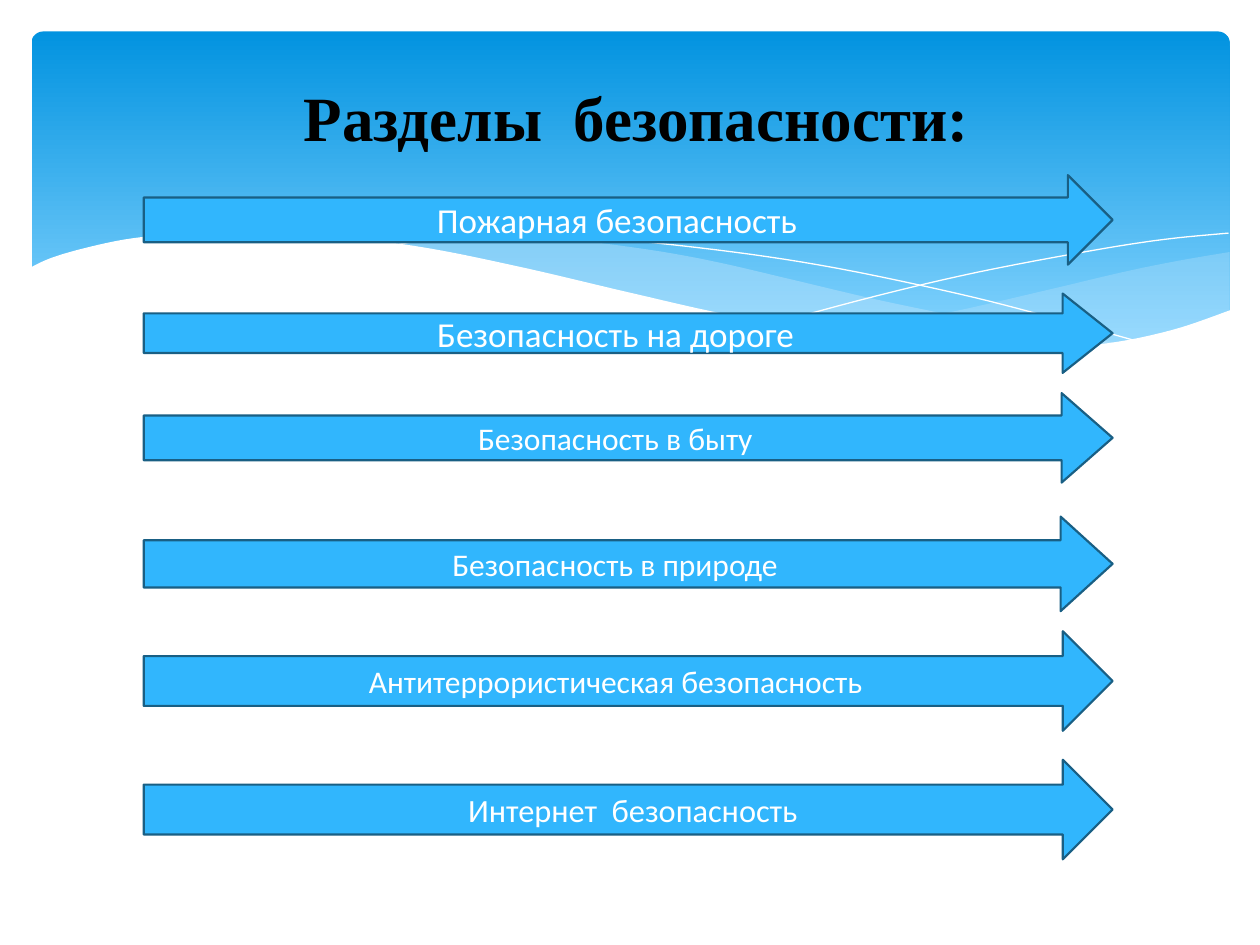
from lxml import etree
from pptx import Presentation
from pptx import util as u
from pptx.dml.color import RGBColor
from pptx.enum import shapes, text
from pptx.oxml.ns import qn


def rgb(value):
    return RGBColor.from_string(value)


def curve(knots, steps=6):
    """Points of a smooth (Catmull-Rom) curve through the knots."""
    ends = [knots[0], *knots, knots[-1]]
    points = [knots[0]]
    for a, b, c, d in zip(ends, ends[1:], ends[2:], ends[3:]):
        for i in range(1, steps + 1):
            t = i / steps
            points.append(tuple(
                b[k] + 0.5 * t * (c[k] - a[k]
                                  + t * (2 * a[k] - 5 * b[k] + 4 * c[k] - d[k]
                                         + t * (3 * (b[k] - c[k]) + d[k] - a[k])))
                for k in (0, 1)))
    return points


class Deck:
    WHITE, BLACK = "FFFFFF", "000000"
    ACCENT, EDGE, MIST = "31B6FD", "195F84", "C6E7FC"
    BODY_FONT, TITLE_FONT = "Calibri", "Times New Roman"

    def __init__(self, prs):
        self.s = prs.slides.add_slide(prs.slide_layouts[6])

    def label(self, shape, words, size, font, color, bold=False):
        tf = shape.text_frame
        tf.word_wrap = True
        tf.vertical_anchor = text.MSO_ANCHOR.MIDDLE
        p = tf.paragraphs[0]
        p.text = words
        p.alignment = text.PP_ALIGN.CENTER
        p.font.size, p.font.name, p.font.bold = u.Pt(size), font, bold
        p.font.color.rgb = rgb(color)
        return tf

    def banner(self, x, y, w, h, top, bottom):
        sp = self.s.shapes.add_shape(
            shapes.MSO_SHAPE.ROUNDED_RECTANGLE, *map(u.Inches, (x, y, w, h)))
        sp.shadow.inherit = False
        sp.adjustments[0] = 0.034
        sp.line.fill.background()
        sp.fill.gradient()
        sp.fill.gradient_angle = 270
        for stop, color, pos in zip(sp.fill.gradient_stops, (top, bottom), (0, 0.9)):
            stop.color.rgb = rgb(color)
            stop.position = pos

    def outline(self, points, close):
        first, *rest = [(u.Inches(x), u.Inches(y)) for x, y in points]
        fb = self.s.shapes.build_freeform(*first, scale=1.0)
        fb.add_line_segments(rest, close=close)
        sp = fb.convert_to_shape()
        sp.shadow.inherit = False
        return sp

    def area(self, points, color, opacity=100):
        sp = self.outline(points, True)
        sp.line.fill.background()
        sp.fill.solid()
        sp.fill.fore_color.rgb = rgb(color)
        if opacity < 100:
            clr = sp.element.spPr.find(qn("a:solidFill"))[0]
            etree.SubElement(clr, qn("a:alpha")).set("val", str(opacity * 1000))

    def thread(self, points):
        sp = self.outline(points, False)
        sp.fill.background()
        sp.line.color.rgb = rgb(self.WHITE)
        sp.line.width = u.Pt(0)

    def title(self, words, x, y, w, h):
        sp = self.s.shapes.add_textbox(*map(u.Inches, (x, y, w, h)))
        self.label(sp, words, 36, self.TITLE_FONT, self.BLACK, True)

    def arrow(self, words, y, h, head, size, inset=0.1):
        sp = self.s.shapes.add_shape(
            shapes.MSO_SHAPE.RIGHT_ARROW, *map(u.Inches, (1.14, y, 7.69, h)))
        sp.shadow.inherit = False
        sp.adjustments[1] = head
        sp.fill.solid()
        sp.fill.fore_color.rgb = rgb(self.ACCENT)
        sp.line.color.rgb = rgb(self.EDGE)
        sp.line.width = u.Pt(1.25)
        tf = self.label(sp, words, size, self.BODY_FONT, self.WHITE)
        tf.margin_left = u.Inches(inset)


# Wave edges, as knots in inches
RIGHT_TOP = [(9.76, 2), (9.35, 2.07), (8.91, 2.16), (8.32, 2.3), (7.53, 2.48),
             (6.61, 2.65)]
RIGHT_BOTTOM = [(6.61, 2.65), (7.05, 2.71), (7.57, 2.76), (8.14, 2.78),
                (8.63, 2.75), (9.05, 2.69), (9.42, 2.59), (9.76, 2.47)]
MIDDLE_TOP = [(8.93, 2.73), (8.07, 2.6), (7.06, 2.4), (6.29, 2.22), (5.69, 2.08),
              (5.14, 1.98), (4.42, 1.89), (3.8, 1.85), (3.28, 1.87), (2.86, 1.91)]
MIDDLE_BOTTOM = [(2.86, 1.91), (3.62, 2.03), (4.49, 2.22), (5.3, 2.4), (6.01, 2.55),
                 (6.65, 2.66), (7.22, 2.74), (7.85, 2.78), (8.38, 2.78), (8.93, 2.73)]
FALLING = [(3.09, 1.95), (3.53, 1.89), (4.16, 1.87), (4.89, 1.9), (5.82, 2),
           (6.65, 2.13), (7.6, 2.33), (8.31, 2.51), (9.07, 2.72)]
RISING = [(6.13, 2.57), (6.95, 2.35), (7.76, 2.16), (8.66, 1.99), (9.24, 1.9),
          (9.75, 1.85)]
FRONT = [(9.77, 2.46), (9.3, 2.62), (8.75, 2.73), (8.09, 2.77), (7.44, 2.74),
         (6.68, 2.65), (5.79, 2.5), (5.03, 2.33), (4.18, 2.13), (3.4, 1.97),
         (2.71, 1.88), (2.11, 1.84), (1.61, 1.84), (1.06, 1.89), (0.67, 1.97),
         (0.4, 2.05), (0.23, 2.13)]

# Arrow text, top, height, head length, font size, left inset
SECTIONS = [
    ("Пожарная безопасность", 1.39, 0.71, 0.5, 20),
    ("Безопасность на дороге", 2.33, 0.63, 0.63, 20),
    ("Безопасность в быту", 3.12, 0.71, 0.57, 18),
    ("Безопасность в природе", 4.1, 0.75, 0.55, 18),
    ("Антитеррористическая безопасность", 5.01, 0.79, 0.5, 18),
    ("Интернет  безопасность", 6.03, 0.79, 0.5, 18.5, 0.37),
]


def main():
    prs = Presentation()
    prs.slide_width, prs.slide_height = u.Inches(10), u.Inches(7.5)
    deck = Deck(prs)

    # Banner with waves
    deck.banner(0.25, 0.25, 9.51, 2.7, "0293E0", "83D3FE")
    deck.area(curve(RIGHT_TOP) + curve(RIGHT_BOTTOM), deck.MIST, 29)
    deck.area(curve(MIDDLE_TOP) + curve(MIDDLE_BOTTOM), deck.MIST, 40)
    deck.thread(curve(FALLING))
    deck.thread(curve(RISING))
    deck.area(curve(FRONT) + [(0.23, 3.29), (9.77, 3.29)], deck.WHITE)

    # Title and sections
    deck.title("Разделы  безопасности:", 0.55, 0.37, 9, 1.1)
    for section in SECTIONS:
        deck.arrow(*section)

    prs.save("out.pptx")


if __name__ == "__main__":
    main()
